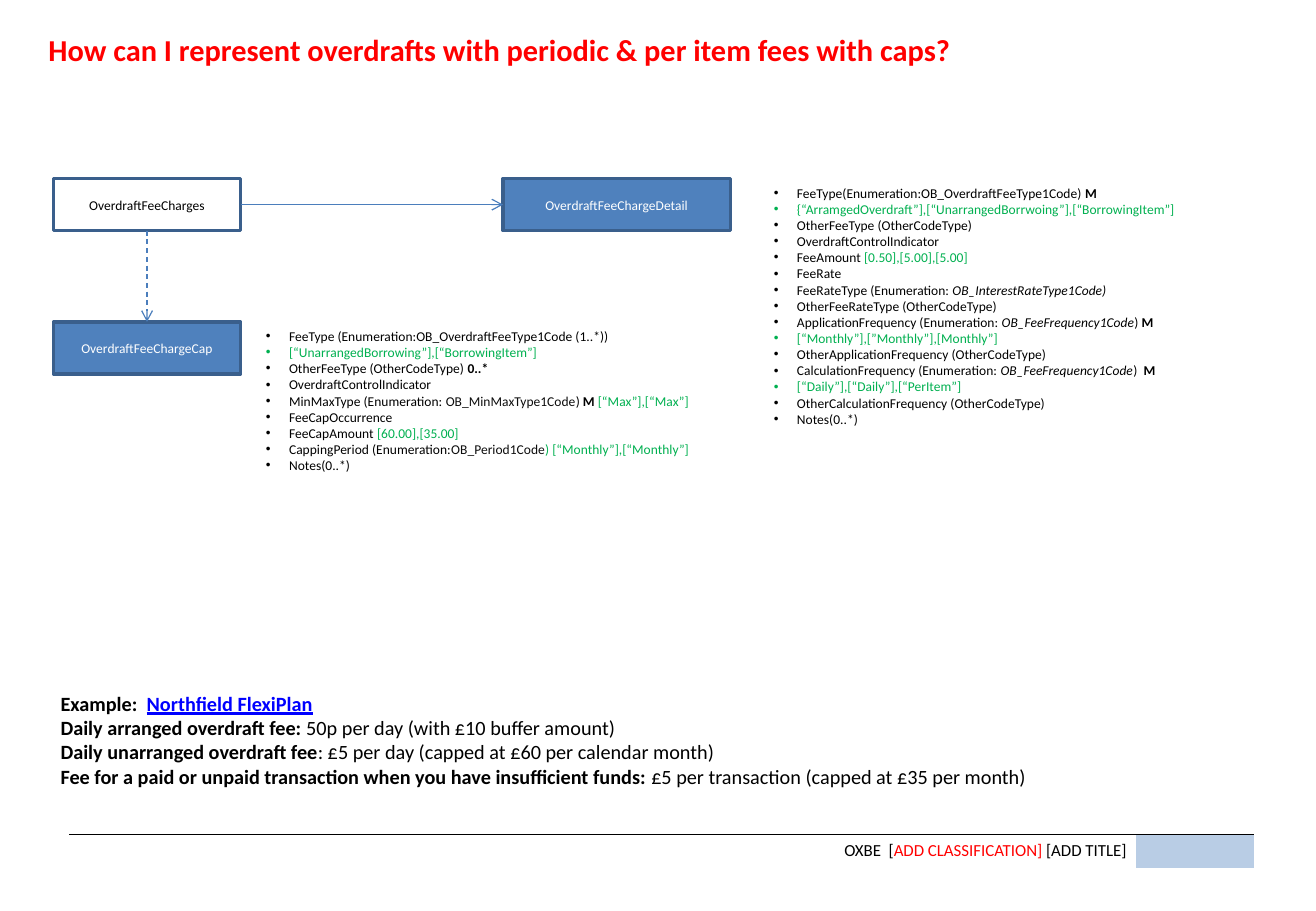
import pptx
import pptx.util
import pptx.dml.color
import pptx.enum.dml
import pptx.enum.shapes
import pptx.enum.text
import pptx.oxml
import pptx.oxml.ns

Inches = pptx.util.Inches
Pt = pptx.util.Pt
ALIGN = pptx.enum.text.PP_ALIGN
ANCHOR = pptx.enum.text.MSO_ANCHOR

BLACK, WHITE, RED, GREEN = "000000", "FFFFFF", "FF0000", "00B050"
BLUE, OUTLINE, ARROW = "4F81BD", "3A5F8C", "4B7EBC"

# Run formats, chosen by name next to each piece of text
FORMATS = {
    "plain": {},
    "bold": {"bold": True},
    "italic": {"italic": True},
    "green": {"color": GREEN},
    "grey": {"color": "0D0D0D"},
    "red": {"color": RED},
    "white": {"color": WHITE},
    "title": {"color": RED, "bold": True},
    "link": {"color": "0000FF", "bold": True, "underline": True},
}

DETAIL_FIELDS = [
    [("FeeType(Enumeration:OB_OverdraftFeeType1Code) ", "plain"), ("M", "bold")],
    [("{“ArramgedOverdraft”],[“UnarrangedBorrwoing”],[“BorrowingItem”]", "green")],
    [("OtherFeeType (OtherCodeType)", "plain")],
    [("OverdraftControlIndicator", "plain")],
    [("FeeAmount ", "plain"), ("[0.50],[5.00],[5.00]", "green")],
    [("FeeRate", "plain")],
    [("FeeRateType (Enumeration: ", "plain"), ("OB_InterestRateType1Code)", "italic")],
    [("OtherFeeRateType (OtherCodeType)", "plain")],
    [("ApplicationFrequency (Enumeration: ", "plain"),
     ("OB_FeeFrequency1Code", "italic"), (") ", "plain"), ("M", "bold")],
    [("[“Monthly”],[”Monthly”],[Monthly”]", "green")],
    [("OtherApplicationFrequency (OtherCodeType)", "plain")],
    [("CalculationFrequency (Enumeration: ", "plain"),
     ("OB_FeeFrequency1Code", "italic"), (")  ", "plain"), ("M", "bold")],
    [("[“Daily”],[“Daily”],[“PerItem”]", "green")],
    [("OtherCalculationFrequency (OtherCodeType)", "plain")],
    [("Notes(0..*)", "plain")],
]

CAP_FIELDS = [
    [("FeeType (Enumeration:OB_OverdraftFeeType1Code (1..*))", "plain")],
    [("[“UnarrangedBorrowing”],[“BorrowingItem”]", "green")],
    [("OtherFeeType (OtherCodeType) ", "plain"), ("0..*", "bold")],
    [("OverdraftControlIndicator", "plain")],
    [("MinMaxType (Enumeration: ", "plain"), ("OB_MinMaxType1Code", "grey"),
     (") ", "plain"), ("M ", "bold"), ("[“Max”],[“Max”]", "green")],
    [("FeeCapOccurrence", "plain")],
    [("FeeCapAmount ", "plain"), ("[60.00],[35.00]", "green")],
    [("CappingPeriod (Enumeration:", "plain"), ("OB_Period1Code", "grey"),
     (") [“Monthly”],[“Monthly”]", "green")],
    [("Notes(0..*)", "plain")],
]

EXAMPLE = [
    [("Example:  ", "bold"), ("Northfield FlexiPlan", "link")],
    [("Daily arranged overdraft fee: ", "bold"),
     ("50p per day (with £10 buffer amount)", "plain")],
    [("Daily unarranged overdraft fee", "bold"),
     (": £5 per day (capped at £60 per calendar month)", "plain")],
    [("Fee for a paid or unpaid transaction when you have insufficient funds: ", "bold"),
     ("£5 per transaction (capped at £35 per month)", "plain")],
]

FOOTER = [[("OXBE  [", "plain"), ("ADD CLASSIFICATION] ", "red"), ("[ADD TITLE]", "plain")]]


def rgb(value):
    return pptx.dml.color.RGBColor.from_string(value)


def add_xml(parent, xml):
    """Append a DrawingML element to parent."""
    ns = pptx.oxml.ns.nsdecls("a")
    parent.append(pptx.oxml.parse_xml(xml.replace("/>", f" {ns}/>", 1)))


def write(tf, paragraphs, size, align=ALIGN.LEFT, bullets=False):
    for i, runs in enumerate(paragraphs):
        p = tf.paragraphs[0] if i == 0 else tf.add_paragraph()
        p.alignment = align
        if bullets:
            pPr = p._p.get_or_add_pPr()
            pPr.set("marL", str(Inches(0.19)))
            pPr.set("indent", str(Inches(-0.19)))
            add_xml(pPr, '<a:buFont typeface="Arial"/>')
            add_xml(pPr, '<a:buChar char="•"/>')
        for text, style in runs:
            r = p.add_run()
            r.text = text
            values = {"name": "Calibri", "size": Pt(size), "color": BLACK, **FORMATS[style]}
            r.font.color.rgb = rgb(values.pop("color"))
            for name, value in values.items():
                setattr(r.font, name, value)


def add_text(s, box, paragraphs, size, wrap=False, bullets=False):
    tf = s.shapes.add_textbox(*map(Inches, box)).text_frame
    tf.word_wrap = wrap
    tf.auto_size = pptx.enum.text.MSO_AUTO_SIZE.SHAPE_TO_FIT_TEXT
    write(tf, paragraphs, size, bullets=bullets)


def add_entity(s, box, name, style="white", fill=BLUE):
    sp = s.shapes.add_shape(pptx.enum.shapes.MSO_SHAPE.RECTANGLE, *map(Inches, box))
    sp.shadow.inherit = False
    if fill:
        sp.fill.solid()
        sp.fill.fore_color.rgb = rgb(fill)
    else:
        sp.fill.background()
    sp.line.color.rgb = rgb(OUTLINE)
    sp.line.width = Pt(2)
    sp.text_frame.vertical_anchor = ANCHOR.MIDDLE
    write(sp.text_frame, [[(name, style)]], 8, ALIGN.CENTER)
    return sp


def add_arrow(s, start, start_site, end, end_site, dash=None):
    """Join two entities at their connection sites (0 top, 1 left, 2 bottom, 3 right)."""
    c = s.shapes.add_connector(pptx.enum.shapes.MSO_CONNECTOR.STRAIGHT, 0, 0, 0, 0)
    c.begin_connect(start, start_site)
    c.end_connect(end, end_site)
    c.line.color.rgb = rgb(ARROW)
    c.line.width = Pt(0.75)
    if dash:
        c.line.dash_style = dash
    add_xml(c.line._get_or_add_ln(), '<a:tailEnd type="arrow"/>')
    add_xml(c._element.spPr, "<a:effectLst/>")


def add_footer(s):
    tbl = s.shapes.add_table(1, 2, *map(Inches, (0.57, 6.87, 9.75, 0.28))).table
    tbl.first_row = tbl.horz_banding = False
    # Plain table style without grid
    tbl._tbl.tblPr[0].text = "{2D5ABB26-0587-4C30-8999-92F81FD0307C}"
    margins = {"margin_left": 0.08, "margin_right": 0.08,
               "margin_top": 0.05, "margin_bottom": 0.05}
    for i, (width, fill) in enumerate([(8.78, None), (0.97, "B9CDE5")]):
        tbl.columns[i].width = Inches(width)
        cell = tbl.cell(0, i)
        for name, value in margins.items():
            setattr(cell, name, Inches(value))
        # The top border must precede the fill
        tcPr = cell._tc.get_or_add_tcPr()
        add_xml(tcPr, '<a:lnT w="12700"/>')
        add_xml(tcPr[0], "<a:solidFill/>")
        add_xml(tcPr[0][0], f'<a:srgbClr val="{BLACK}"/>')
        if fill:
            cell.fill.solid()
            cell.fill.fore_color.rgb = rgb(fill)
        else:
            cell.fill.background()
    write(tbl.cell(0, 0).text_frame, FOOTER, 10, ALIGN.RIGHT)
    tbl.cell(0, 1).text_frame.paragraphs[0].font.size = Pt(10)


def main():
    prs = pptx.Presentation()
    prs.slide_width, prs.slide_height = Inches(10.83), Inches(7.5)
    s = prs.slides.add_slide(prs.slide_layouts[6])

    # Footer and title
    add_footer(s)
    title = "How can I represent overdrafts with periodic & per item fees with caps?"
    add_text(s, (0.3, 0.21, 7.69, 0.4), [[(title, "title")]], 18)

    # Entities and their links
    charges = add_entity(s, (0.44, 1.47, 1.54, 0.43), "OverdraftFeeCharges", "plain", None)
    detail = add_entity(s, (4.14, 1.47, 1.87, 0.43), "OverdraftFeeChargeDetail")
    cap = add_entity(s, (0.44, 2.65, 1.54, 0.43), "OverdraftFeeChargeCap")
    add_arrow(s, charges, 2, cap, 0, pptx.enum.dml.MSO_LINE.DASH)
    add_arrow(s, charges, 3, detail, 1)

    # Field lists
    add_text(s, (6.27, 1.47, 3.55, 2.12), DETAIL_FIELDS, 8, bullets=True)
    add_text(s, (2.09, 2.65, 3.72, 1.31), CAP_FIELDS, 8, bullets=True)

    # Worked example
    add_text(s, (0.4, 5.64, 8.55, 0.91), EXAMPLE, 12, wrap=True)

    prs.save("out.pptx")


if __name__ == "__main__":
    main()
